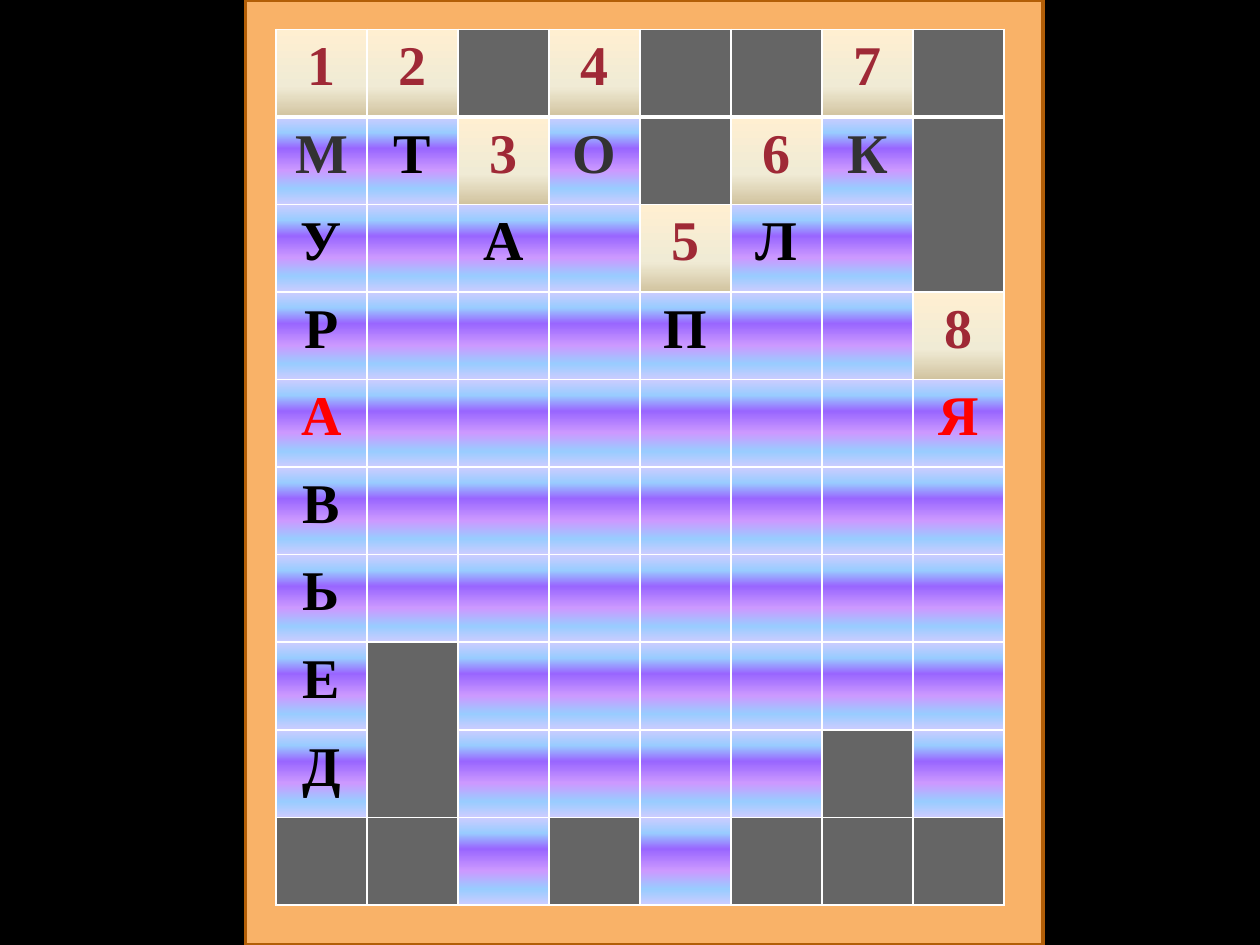
from lxml.etree import SubElement
from pptx import Presentation
from pptx.dml.color import RGBColor
from pptx.enum.shapes import MSO_SHAPE
from pptx.enum.text import PP_ALIGN
from pptx.oxml.ns import qn
from pptx.util import Inches, Pt

COLORS = {
    "backdrop": "000000", "frame": "F9B268", "frame_edge": "B25E07",
    "blocked": "656565", "grid": "FFFFFF", "number": "9F2936",
    "letter": "000000", "soft_letter": "323232", "key_letter": "FF0000",
    "cream_top": "FFEFD1", "cream_mid": "F0EBD5", "cream_end": "D1C39F",
    "lilac": "CCCCFF", "sky": "99CCFF", "violet": "9966FF", "mauve": "CC99FF",
}
NUMBER_STOPS = [(0, "cream_top"), (65, "cream_mid"), (100, "cream_end")]
LETTER_STOPS = [(0, "lilac"), (18, "sky"), (36, "violet"),
                (61, "mauve"), (82, "sky"), (100, "lilac")]
CROSSWORD = [
    "12#4##7#",
    "МТ3О#6К#",
    "У.А.5Л.#",
    "Р...П..8",
    "А......Я",
    "В.......",
    "Ь.......",
    "Е#......",
    "Д#....#.",
    "##.#.###",
]
KEY_ROW = 4
SOFT_LETTERS = "МОК"
TALL_BLOCKS = [(1, 7), (7, 1)]


def add_border(properties, side, points):
    line = SubElement(properties, qn(f"a:ln{side}"), w=str(Pt(points)))
    fill = SubElement(line, qn("a:solidFill"))
    SubElement(fill, qn("a:srgbClr"), val=COLORS["grid"])


def add_gradient(properties, stops):
    gradient = SubElement(properties, qn("a:gradFill"), rotWithShape="1")
    stop_list = SubElement(gradient, qn("a:gsLst"))
    for percent, color in stops:
        stop = SubElement(stop_list, qn("a:gs"), pos=str(percent * 1000))
        SubElement(stop, qn("a:srgbClr"), val=COLORS[color])
    SubElement(gradient, qn("a:lin"), ang="5400000", scaled="0")


deck = Presentation()
deck.slide_width, deck.slide_height = Inches(10), Inches(7.5)
W, H = deck.slide_width, deck.slide_height
slide = deck.slides.add_slide(deck.slide_layouts[6])
slide.background.fill.solid()
slide.background.fill.fore_color.rgb = RGBColor.from_string(COLORS["backdrop"])

frame = slide.shapes.add_shape(
    MSO_SHAPE.FLOWCHART_PROCESS, int(W * 0.195), 0, int(W * 0.633), H)
frame.shadow.inherit = False
frame.fill.solid()
frame.fill.fore_color.rgb = RGBColor.from_string(COLORS["frame"])
frame.line.color.rgb = RGBColor.from_string(COLORS["frame_edge"])
frame.line.width = Pt(2)

crossword = slide.shapes.add_table(
    len(CROSSWORD), len(CROSSWORD[0]),
    int(W * 0.219), int(H * 0.031), int(W * 0.578), int(H * 0.927)).table
for flag, value in {"first_row": False, "horz_banding": False}.items():
    setattr(crossword, flag, value)

for row, marks in enumerate(CROSSWORD):
    for column, mark in enumerate(marks):
        cell = crossword.cell(row, column)
        properties = cell._tc.get_or_add_tcPr()
        widths = {"L": 1, "R": 1, "T": 3 if row == 1 else 1, "B": 3 if row == 0 else 1}
        for side, points in widths.items():
            add_border(properties, side, points)
        if mark == "#":
            cell.fill.solid()
            cell.fill.fore_color.rgb = RGBColor.from_string(COLORS["blocked"])
            continue
        add_gradient(properties, NUMBER_STOPS if mark.isdigit() else LETTER_STOPS)
        if mark == ".":
            continue
        if mark.isdigit():
            ink = "number"
        elif row == KEY_ROW:
            ink = "key_letter"
        else:
            ink = "soft_letter" if mark in SOFT_LETTERS else "letter"
        entry = cell.text_frame.paragraphs[0]
        entry.alignment = PP_ALIGN.CENTER
        glyph = entry.add_run()
        glyph.text = mark
        for name, value in {"name": "Times New Roman", "size": Pt(32), "bold": True}.items():
            setattr(glyph.font, name, value)
        glyph.font.color.rgb = RGBColor.from_string(COLORS[ink])

for row, column in TALL_BLOCKS:
    crossword.cell(row, column).merge(crossword.cell(row + 1, column))

deck.save("out.pptx")
